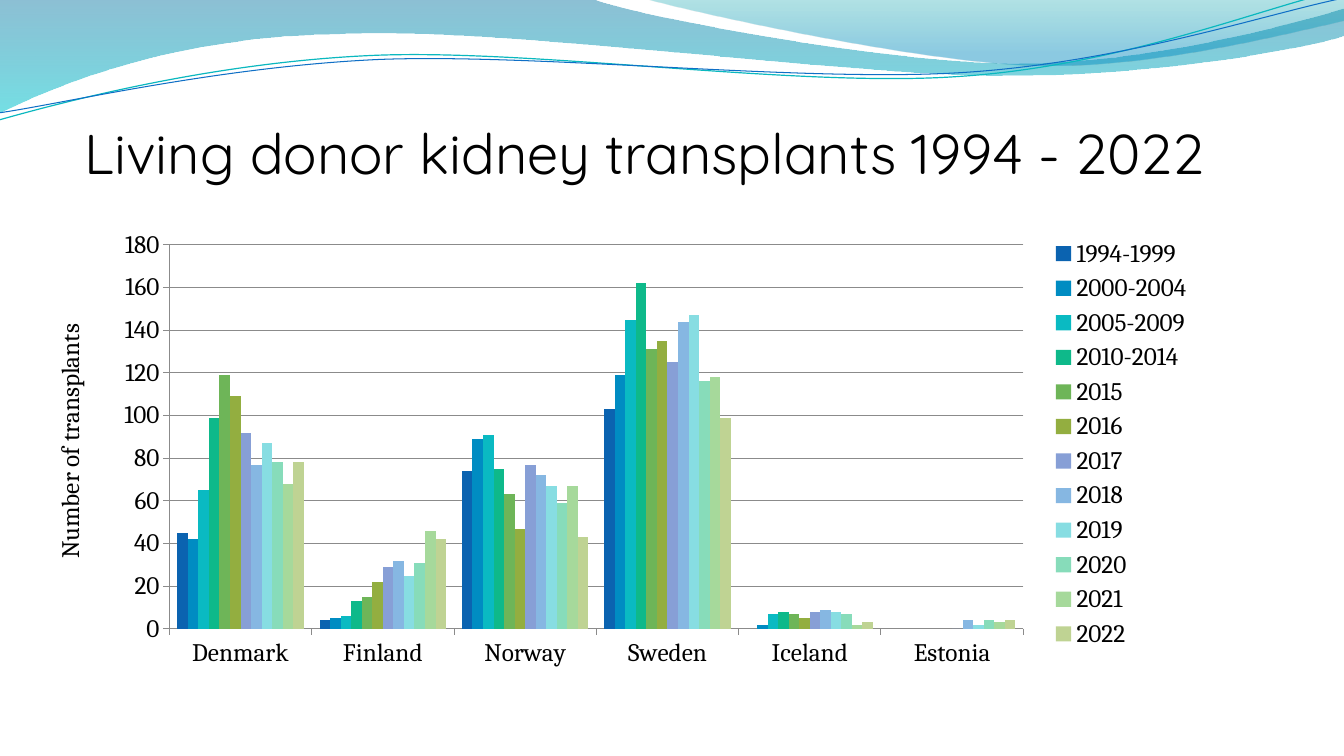
from lxml import etree
from pptx import Presentation
from pptx.chart.data import CategoryChartData
from pptx.dml.color import RGBColor
from pptx.enum.chart import XL_CHART_TYPE, XL_LEGEND_POSITION, XL_TICK_MARK
from pptx.enum.text import MSO_ANCHOR
from pptx.oxml.ns import qn
from pptx.util import Inches, Pt

COLUMNS = XL_CHART_TYPE.COLUMN_CLUSTERED
RIGHT = XL_LEGEND_POSITION.RIGHT
OUTSIDE = XL_TICK_MARK.OUTSIDE
TOP = MSO_ANCHOR.TOP
CHART_WIDTH, CHART_HEIGHT = 11.66, 4.58


def color(value):
    return RGBColor.from_string(value)


def add_outline(start, pieces, close):
    anchors = [(Inches(piece[-2]), Inches(piece[-1])) for piece in pieces]
    builder = slide.shapes.build_freeform(Inches(start[0]), Inches(start[1]), scale=1.0)
    builder.add_line_segments(anchors, close=close)
    shape = builder.convert_to_shape()
    shape.shadow.inherit = False
    segments = list(shape._element.spPr.iter(qn("a:lnTo")))
    for segment, piece in zip(segments, pieces):
        if len(piece) == 6:
            curve = etree.Element(qn("a:cubicBezTo"))
            for x, y in zip(piece[::2], piece[1::2]):
                etree.SubElement(curve, qn("a:pt"), x=str(Inches(x) - shape.left),
                                 y=str(Inches(y) - shape.top))
            segment.getparent().replace(segment, curve)
    return shape


presentation = Presentation()
presentation.slide_width = Inches(13.33)
presentation.slide_height = Inches(7.5)
slide = presentation.slides.add_slide(presentation.slide_layouts[6])

waves = [
    ((0, 0),
     [(5.87, -0.01), (6.34, 0.17, 8.84, 0.63, 10.11, 0.63),
      (11.37, 0.63, 12.77, 0.26, 13.33, 0.09), (13.34, 0.36),
      (13.11, 0.44, 11.59, 0.76, 9.94, 0.75), (8.29, 0.75, 5.09, 0.28, 3.43, 0.34),
      (1.72, 0.36, 0.61, 0.83, -0.02, 1.13)],
     [(0, "0074A1", 45), (1, "00C6CF", 55)]),
    ((6.38, -0.01),
     [(6.79, 0.11, 9.09, 0.62, 10.25, 0.65), (11.4, 0.69, 12.82, 0.32, 13.33, 0.21),
      (13.33, 0)],
     [(0, "00A1A9", 30), (0.8, "008BBF", 45)]),
]
for start, pieces, stops in waves:
    wave = add_outline(start, pieces, True)
    wave.line.fill.background()
    wave.fill.gradient()
    wave.fill.gradient_angle = 270
    for stop, (position, value, opacity) in zip(wave.fill.gradient_stops, stops):
        stop.position = position
        stop.color.rgb = color(value)
    tints = wave._element.spPr.iter(qn("a:srgbClr"))
    for tint, (position, value, opacity) in zip(tints, stops):
        etree.SubElement(tint, qn("a:alpha"), val=str(opacity * 1000))

threads = [
    ((-0.01, 1.19),
     [(0.63, 1.01, 2.1, 0.62, 3.69, 0.55), (5.27, 0.48, 7.89, 0.87, 9.49, 0.76),
      (11.1, 0.66, 12.51, 0.08, 13.3, -0.1)], "0AB8BF", 0.85),
    ((-0.01, 1.12),
     [(0.62, 1.03, 2.18, 0.66, 3.77, 0.59), (5.37, 0.53, 7.96, 0.82, 9.55, 0.72),
      (11.14, 0.62, 12.55, 0.14, 13.33, -0.02)], "0F6FC6", 0.75),
]
for start, pieces, value, width in threads:
    thread = add_outline(start, pieces, False)
    thread.fill.background()
    thread.line.color.rgb = color(value)
    thread.line.width = Pt(width)

title = slide.shapes.add_textbox(Inches(0.74), Inches(1.26), Inches(11.84), Inches(0.77))
title.text_frame.word_wrap = True
title.text_frame.vertical_anchor = TOP
paragraph = title.text_frame.paragraphs[0]
paragraph.text = "Living donor kidney transplants 1994 - 2022"
paragraph.line_spacing = 0.8
paragraph.font.name = "Quicksand"
paragraph.font.size = Pt(40)
paragraph.font.color.rgb = color("000000")

periods = [
    ("1994-1999", [45, 4, 74, 103, None, None], "0B63B0"),
    ("2000-2004", [42, 5, 89, 119, 2, None], "008CC2"),
    ("2005-2009", [65, 6, 91, 145, 7, None], "0ABAC2"),
    ("2010-2014", [99, 13, 75, 162, 8, None], "0EB98A"),
    ("2015", [119, 15, 63, 131, 7, None], "6EB558"),
    ("2016", [109, 22, 47, 135, 5, None], "93AE40"),
    ("2017", [92, 29, 77, 125, 8, 0], "879FD6"),
    ("2018", [77, 32, 72, 144, 9, 4], "86B7E2"),
    ("2019", [87, 25, 67, 147, 8, 2], "87DDE2"),
    ("2020", [78, 31, 59, 116, 7, 4], "87DCBA"),
    ("2021", [68, 46, 67, 118, 2, 3], "A6D99B"),
    ("2022", [78, 42, 43, 99, 3, 4], "BFD393"),
]
data = CategoryChartData()
data.categories = ["Denmark", "Finland", "Norway", "Sweden", "Iceland", "Estonia"]
for name, values, fill in periods:
    data.add_series(name, values)
chart = slide.shapes.add_chart(
    COLUMNS, Inches(0.27), Inches(2.22), Inches(CHART_WIDTH), Inches(CHART_HEIGHT),
    data).chart
chart.has_title = False
chart.font.name = "Cambria"
chart.font.size = Pt(18)
chart.font.color.rgb = color("000000")

plot = chart.plots[0]
plot.gap_width = 150
plot.overlap = 0
plot.vary_by_categories = False
for series, (name, values, fill) in zip(plot.series, periods):
    series.format.fill.solid()
    series.format.fill.fore_color.rgb = color(fill)

chart.has_legend = True
chart.legend.position = RIGHT
chart.legend.include_in_layout = False

value_axis = chart.value_axis
value_axis.minimum_scale = 0
value_axis.maximum_scale = 180
value_axis.major_unit = 20
value_axis.has_major_gridlines = True
for axis in (chart.category_axis, value_axis):
    axis.major_tick_mark = OUTSIDE
for ruled in (chart.category_axis, value_axis, value_axis.major_gridlines):
    ruled.format.line.color.rgb = color("8B8B8B")
    ruled.format.line.width = Pt(0.75)

value_axis.has_title = True
axis_title = value_axis.axis_title
axis_title.text_frame.text = "Number of transplants"
axis_font = axis_title.text_frame.paragraphs[0].font
axis_font.name = "Cambria"
axis_font.size = Pt(18)
axis_font.bold = False
axis_font.color.rgb = color("000000")
axis_title.text_frame._txBody.bodyPr.set("rot", "-5400000")
axis_title.text_frame._txBody.bodyPr.set("vert", "horz")

plot_area = chart._chartSpace.find(".//" + qn("c:plotArea"))
placements = [
    (plot_area, 0, {"layoutTarget": "inner"}, {"x": 1.41, "y": 0.21, "w": 8.47, "h": 3.81}),
    (axis_title._element, 1, {}, {"x": 0.21, "y": 0.95}),
    (chart.legend._element, 1, {}, {"x": 10.09, "y": 0.1, "w": 1.52, "h": 4.17}),
]
extents = {"x": CHART_WIDTH, "y": CHART_HEIGHT, "w": CHART_WIDTH, "h": CHART_HEIGHT}
for parent, index, target, lengths in placements:
    for unused in parent.findall(qn("c:layout")):
        parent.remove(unused)
    layout = etree.Element(qn("c:layout"))
    manual = etree.SubElement(layout, qn("c:manualLayout"))
    shares = {key: length / extents[key] for key, length in lengths.items()}
    settings = {**target, "xMode": "edge", "yMode": "edge", **shares}
    for key, setting in settings.items():
        etree.SubElement(manual, qn("c:" + key), val=str(setting))
    parent.insert(index, layout)

presentation.save("out.pptx")
